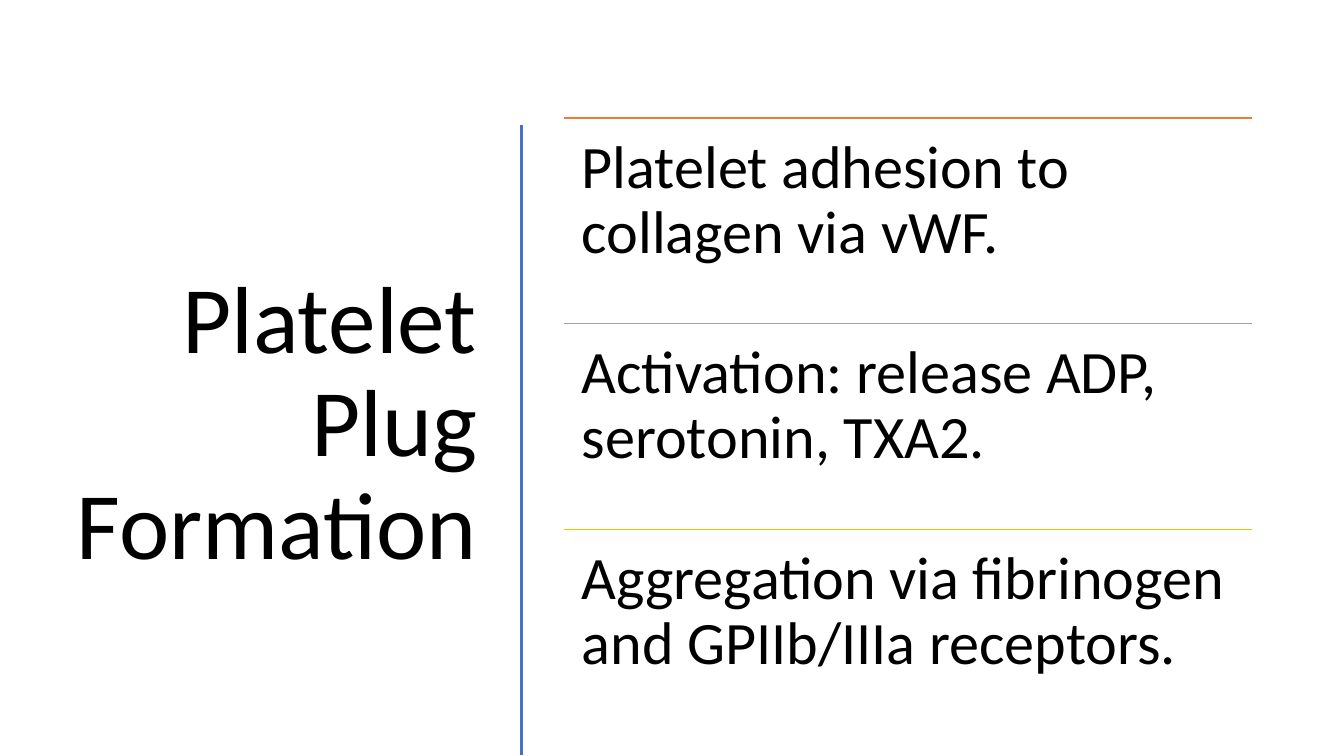
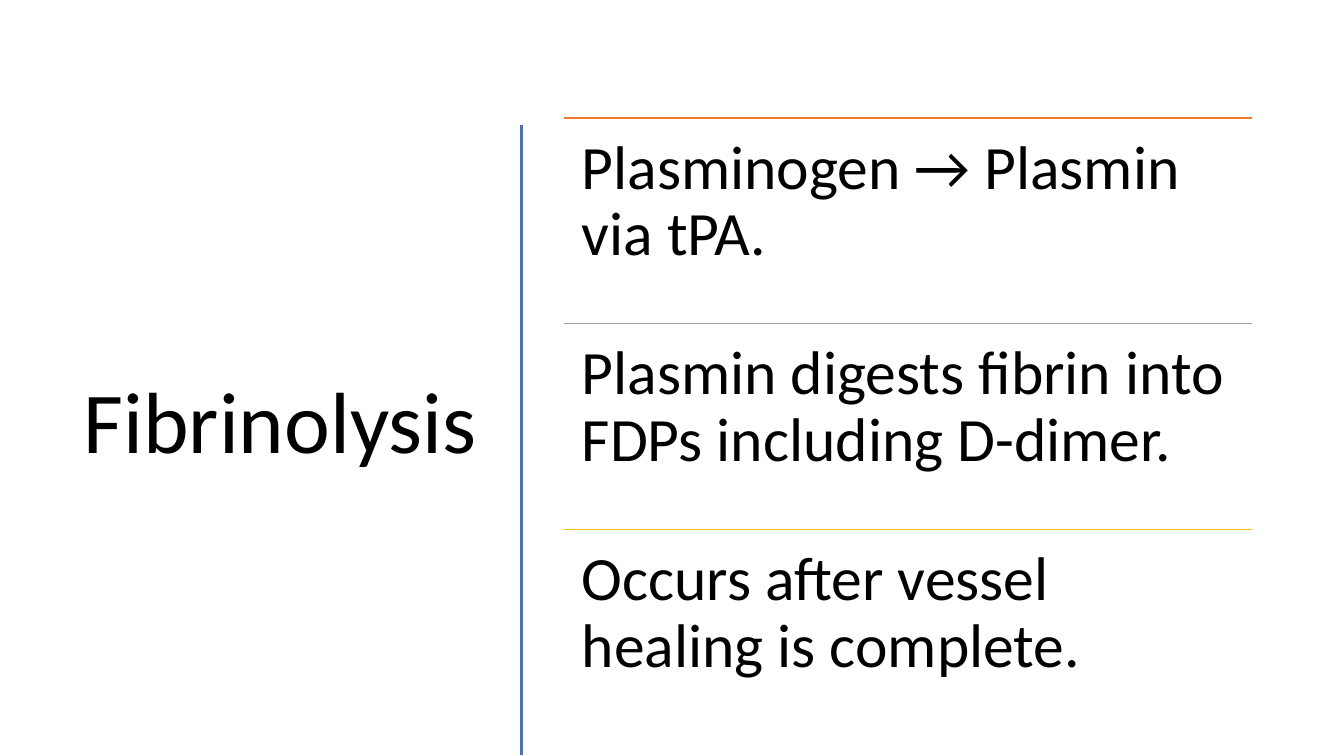
from lxml.etree import SubElement
from pptx import Presentation
from pptx.dml.color import RGBColor
from pptx.enum.shapes import MSO_CONNECTOR
from pptx.enum.text import MSO_ANCHOR, PP_ALIGN
from pptx.oxml.ns import qn
from pptx.util import Inches, Pt

BLACK = RGBColor(0x00, 0x00, 0x00)
BLUE = RGBColor(0x44, 0x72, 0xC4)
ORANGE = RGBColor(0xED, 0x7D, 0x31)
GRAY = RGBColor(0xA5, 0xA5, 0xA5)
GOLD = RGBColor(0xFF, 0xC0, 0x00)
RULE_COLORS = [ORANGE, GRAY, GOLD]
FONT = "Calibri"

SLIDES = [
    {"title": "Platelet Plug Formation", "title_size": 68, "size": 43,
     "points": ["Platelet adhesion to collagen via vWF.",
                "Activation: release ADP, serotonin, TXA2.",
                "Aggregation via fibrinogen and GPIIb/IIIa receptors."]},
    {"title": "Fibrinolysis", "title_size": 62, "size": 44,
     "points": ["Plasminogen → Plasmin via tPA.",
                "Plasmin digests fibrin into FDPs including D-dimer.",
                "Occurs after vessel healing is complete."]},
]

TOP = 1.17
TITLE_LEFT, TITLE_W, TITLE_H = 0.52, 4.31, 6.11
DIVIDER_X, DIVIDER_TOP, DIVIDER_BOTTOM = 5.17, 1.24, 7.49
LIST_LEFT, LIST_W, ROW_H = 5.59, 6.83, 2.04


def add_text(s, text, x, y, w, h, size, align=PP_ALIGN.LEFT,
             anchor=MSO_ANCHOR.TOP, inset_x=0.18, inset_y=0.18):
    tf = s.shapes.add_textbox(Inches(x), Inches(y), Inches(w), Inches(h)).text_frame
    tf.word_wrap = True
    tf.vertical_anchor = anchor
    tf.margin_left = tf.margin_right = Inches(inset_x)
    tf.margin_top = tf.margin_bottom = Inches(inset_y)
    p = tf.paragraphs[0]
    p.alignment = align
    p.line_spacing = 0.9
    r = p.add_run()
    r.text = text
    r.font.name = FONT
    r.font.size = Pt(size)
    r.font.color.rgb = BLACK


def add_line(s, x1, y1, x2, y2, color, width):
    line = s.shapes.add_connector(MSO_CONNECTOR.STRAIGHT, Inches(x1), Inches(y1),
                                  Inches(x2), Inches(y2))
    line.line.color.rgb = color
    line.line.width = Pt(width)
    SubElement(line._element.spPr, qn("a:effectLst"))


def add_slide(prs, content):
    s = prs.slides.add_slide(prs.slide_layouts[6])
    add_text(s, content["title"], TITLE_LEFT, TOP, TITLE_W, TITLE_H,
             content["title_size"], align=PP_ALIGN.RIGHT,
             anchor=MSO_ANCHOR.MIDDLE, inset_x=0.1, inset_y=0.05)
    add_line(s, DIVIDER_X, DIVIDER_TOP, DIVIDER_X, DIVIDER_BOTTOM, BLUE, 2)
    for i, (point, color) in enumerate(zip(content["points"], RULE_COLORS)):
        y = TOP + i * ROW_H
        add_line(s, LIST_LEFT, y, LIST_LEFT + LIST_W, y, color, 1)
        add_text(s, point, LIST_LEFT, y, LIST_W, ROW_H, content["size"])


def main():
    prs = Presentation()
    prs.slide_width, prs.slide_height = Inches(13.33), Inches(7.5)
    for content in SLIDES:
        add_slide(prs, content)
    prs.save("out.pptx")


if __name__ == "__main__":
    main()
